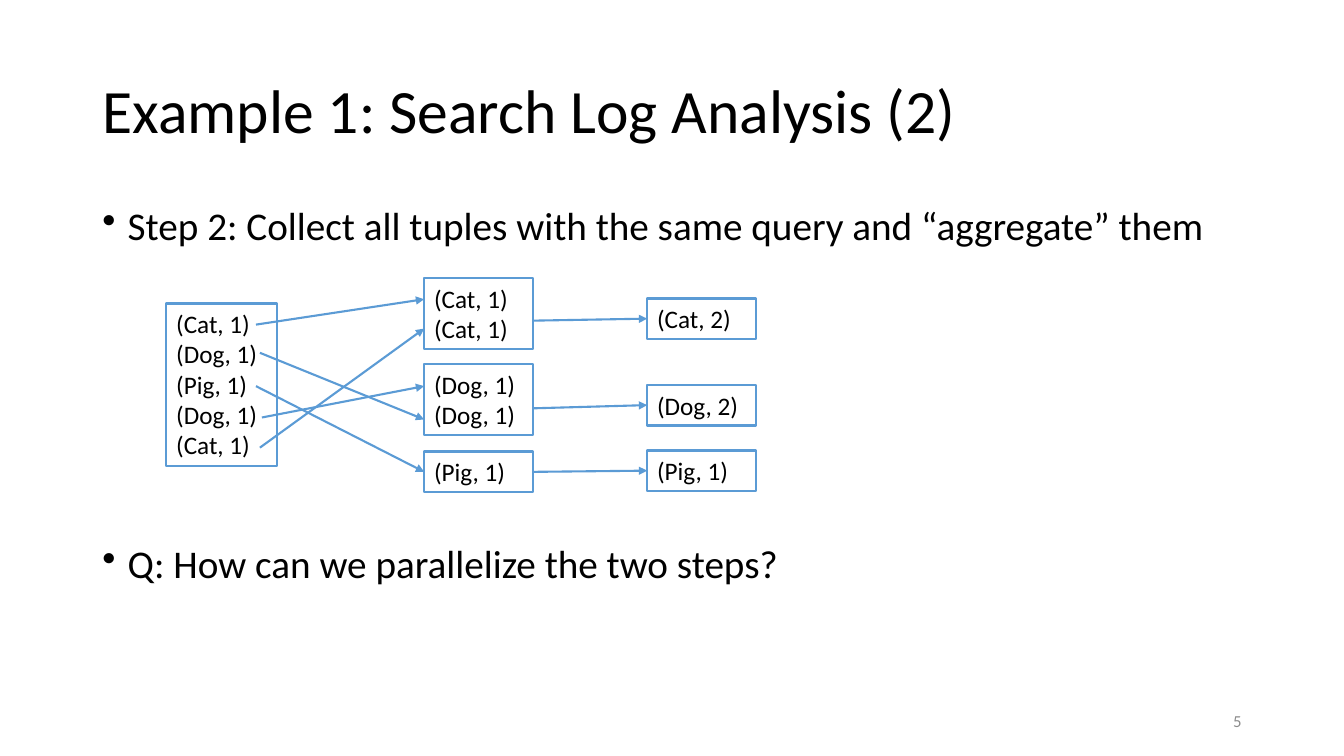
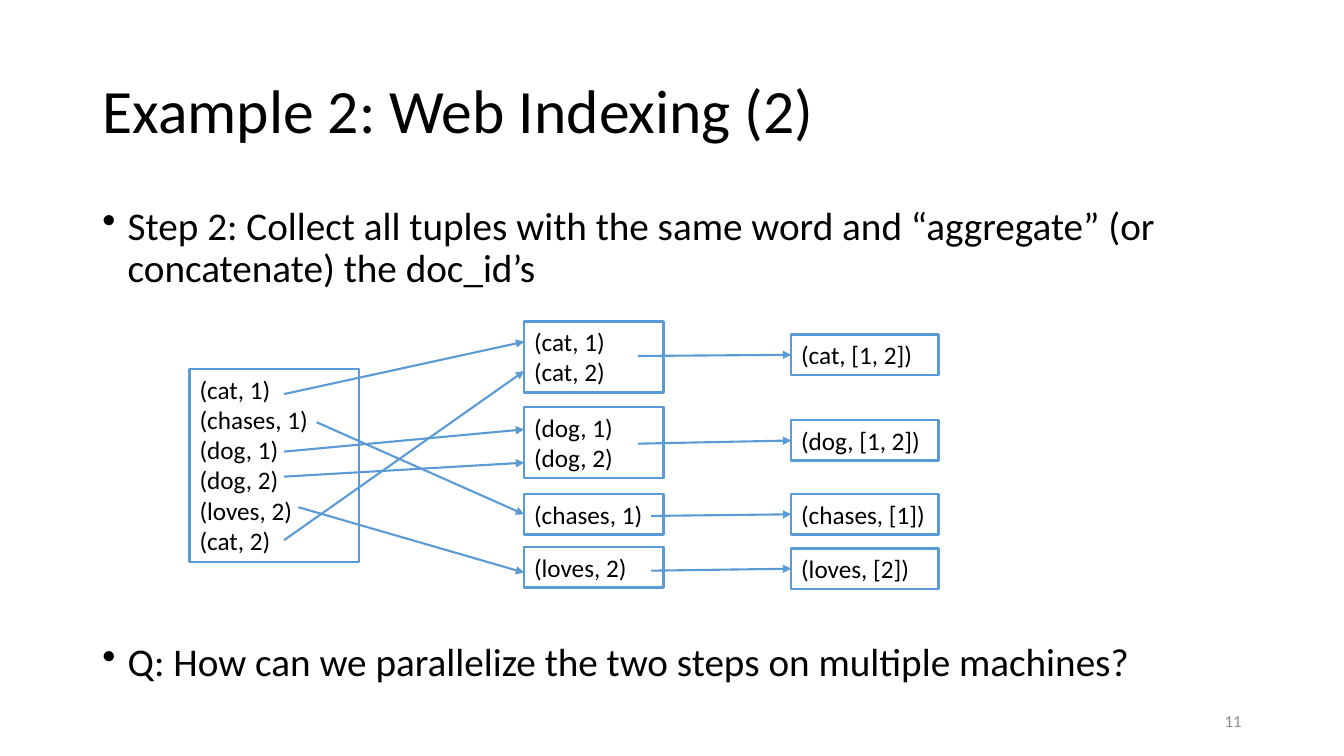
from dataclasses import dataclass
from typing import Any

from pptx import Presentation
from pptx.dml.color import RGBColor
from pptx.enum.shapes import MSO_CONNECTOR as Wire, MSO_SHAPE as Form
from pptx.enum.text import MSO_ANCHOR as Anchor, MSO_AUTO_SIZE as Auto, PP_ALIGN as Align
from pptx.oxml.ns import qn
from pptx.oxml.xmlchemy import OxmlElement as Node
from pptx.util import Cm, Pt

BLACK, GREY, BLUE = "000000", "8C8C8C", "5B9BD5"
FONT = "Calibri"
LEFT, WIDTH = 2.33, 29.21
NEAR = Cm(0.08)

PLAIN = {"word_wrap": True, "auto_size": Auto.NONE, "vertical_anchor": Anchor.TOP}
MIDDLE = PLAIN | {"vertical_anchor": Anchor.MIDDLE}
SNUG = PLAIN | {"margin_right": 0}
TIGHT = {"alignment": Align.LEFT, "line_spacing": 0.9}


@dataclass
class Stack:
    """A column of boxes, and the arrows (x, y, end y) that reach its left edge."""
    x: float
    width: float
    boxes: list[tuple[float, list[str]]]
    links: list[tuple[float, float, float]]


@dataclass
class Page:
    title: str
    step: str
    query: str
    query_top: float
    number: str
    stacks: list[Stack]


PAGES = [
    Page(
        "Example 1: Search Log Analysis (2)",
        "Step 2: Collect all tuples with the same query and “aggregate” them",
        "Q: How can we parallelize the two steps?", 13.6, "5",
        [
            Stack(4.19, 2.79, [
                (7.65, ["(Cat, 1)", "(Dog, 1)", "(Pig, 1)", "(Dog, 1)", "(Cat, 1)"]),
            ], []),
            Stack(10.69, 2.74, [
                (7.01, ["(Cat, 1)", "(Cat, 1)"]),
                (9.17, ["(Dog, 1)", "(Dog, 1)"]),
                (11.38, ["(Pig, 1)"]),
            ], [
                (6.45, 8.18, 7.54), (6.55, 8.89, 10.57), (6.45, 9.73, 11.89),
                (6.6, 10.52, 9.73), (6.55, 11.28, 8.28),
            ]),
            Stack(16.31, 2.74, [
                (7.52, ["(Cat, 2)"]), (9.7, ["(Dog, 2)"]), (11.35, ["(Pig, 1)"]),
            ], [
                (13.43, 8.08, 8.05), (13.43, 10.29, 10.24), (13.43, 11.91, 11.89),
            ]),
        ],
    ),
    Page(
        "Example 2: Web Indexing (2)",
        "Step 2: Collect all tuples with the same word and “aggregate” "
        "(or concatenate) the doc_id’s",
        "Q: How can we parallelize the two steps on multiple machines?", 16.07, "11",
        [
            Stack(4.78, 4.27, [
                (9.3, ["(cat, 1)", "(chases, 1)", "(dog, 1)", "(dog, 2)",
                       "(loves, 2)", "(cat, 2)"]),
            ], []),
            Stack(13.21, 3.51, [
                (8.1, ["(cat, 1)", "(cat, 2)"]),
                (10.26, ["(dog, 1)", "(dog, 2)"]),
                (12.45, ["(chases, 1)"]),
                (13.79, ["(loves, 2)"]),
            ], [
                (7.16, 9.93, 8.61), (7.98, 10.64, 12.95), (7.16, 11.38, 10.82),
                (7.16, 12.01, 11.66), (7.52, 12.78, 14.43), (7.16, 13.61, 9.35),
            ]),
            Stack(19.94, 3.71, [
                (8.43, ["(cat, [1, 2])"]), (10.59, ["(dog, [1, 2])"]),
                (12.45, ["(chases, [1])"]), (13.82, ["(loves, [2])"]),
            ], [
                (16.08, 8.97, 8.94), (16.08, 11.18, 11.15),
                (16.41, 13, 12.98), (16.41, 14.38, 14.35),
            ]),
        ],
    ),
]


def tint(code: str) -> RGBColor:
    return RGBColor.from_string(code)


def apply(item: Any, style: dict[str, Any]) -> None:
    for name, value in style.items():
        setattr(item, name, value)


def place(shape: Any, *spot: float) -> None:
    names = ("left", "top", "width", "height")
    apply(shape, dict(zip(names, map(Cm, spot))))


def write(shape: Any, lines: list[str], size: int, frame: dict[str, Any],
          para: dict[str, Any], code: str = BLACK) -> None:
    text = shape.text_frame
    apply(text, frame)
    text.text = "\n".join(lines)
    for line in text.paragraphs:
        apply(line, para)
        apply(line.font, {"name": FONT, "size": Pt(size)})
        line.font.color.rgb = tint(code)


def add_text(slide: Any, spot: tuple[float, ...], text: str, size: int,
             frame: dict[str, Any], para: dict[str, Any], code: str = BLACK) -> Any:
    shape = slide.shapes.add_textbox(*map(Cm, spot))
    write(shape, [text], size, frame, para, code)
    return shape


def add_point(slide: Any, top: float, text: str) -> None:
    """Add one main bullet across the slide."""
    shape = add_text(slide, (LEFT, top, WIDTH, 1.5), text, 28, PLAIN, TIGHT)
    props = shape.text_frame.paragraphs[0]._p.get_or_add_pPr()
    indent = Cm(0.64)
    props.set("marL", str(indent))
    props.set("indent", str(-indent))
    mark = Node("a:buChar")
    mark.set("char", "•")
    props.append(mark)


def add_box(slide: Any, x: float, y: float, width: float, lines: list[str]) -> Any:
    height = 0.25 + 0.77 * len(lines)
    box = slide.shapes.add_shape(Form.RECTANGLE, *map(Cm, (x, y, width, height)))
    box.shadow.inherit = False
    box.fill.background()
    box.line.color.rgb = tint(BLUE)
    box.line.width = Pt(1.75)
    write(box, lines, 18, SNUG, {"alignment": Align.LEFT})
    return box


def add_arrow(slide: Any, spot: tuple[float, ...], boxes: list[Any]) -> None:
    """Draw an arrow and join each end that meets the middle of a box side."""
    x0, y0, x1, y1 = map(Cm, spot)
    arrow = slide.shapes.add_connector(Wire.STRAIGHT, x0, y0, x1, y1)
    arrow.line.color.rgb = tint(BLUE)
    arrow.line.width = Pt(1.5)
    props = arrow.element.spPr
    head = Node("a:tailEnd")
    head.set("type", "triangle")
    props.find(qn("a:ln")).append(head)
    props.append(Node("a:effectLst"))
    for box in boxes:
        mid = box.top + box.height // 2
        right = box.left + box.width
        if abs(x0 - right) < NEAR and abs(y0 - mid) < NEAR:
            arrow.begin_connect(box, 3)
        if abs(x1 - box.left) < NEAR and abs(y1 - mid) < NEAR:
            arrow.end_connect(box, 1)


def add_page(deck: Any, page: Page) -> None:
    slide = deck.slides.add_slide(deck.slide_layouts[5])
    title = slide.shapes.title
    place(title, LEFT, 1.02, WIDTH, 3.68)
    write(title, [page.title], 44, MIDDLE, TIGHT)
    add_point(slide, 5.08, page.step)
    add_point(slide, page.query_top, page.query)
    add_text(slide, (23.92, 17.65, 7.62, 1.02), page.number, 12, MIDDLE,
             {"alignment": Align.RIGHT}, GREY)
    boxes = [add_box(slide, stack.x, y, stack.width, lines)
             for stack in page.stacks for y, lines in stack.boxes]
    for stack in page.stacks:
        for x, y, end in stack.links:
            add_arrow(slide, (x, y, stack.x, end), boxes)


def main() -> None:
    deck = Presentation()
    apply(deck, {"slide_width": Cm(33.87), "slide_height": Cm(19.05)})
    for page in PAGES:
        add_page(deck, page)
    deck.save("out.pptx")


if __name__ == "__main__":
    main()
